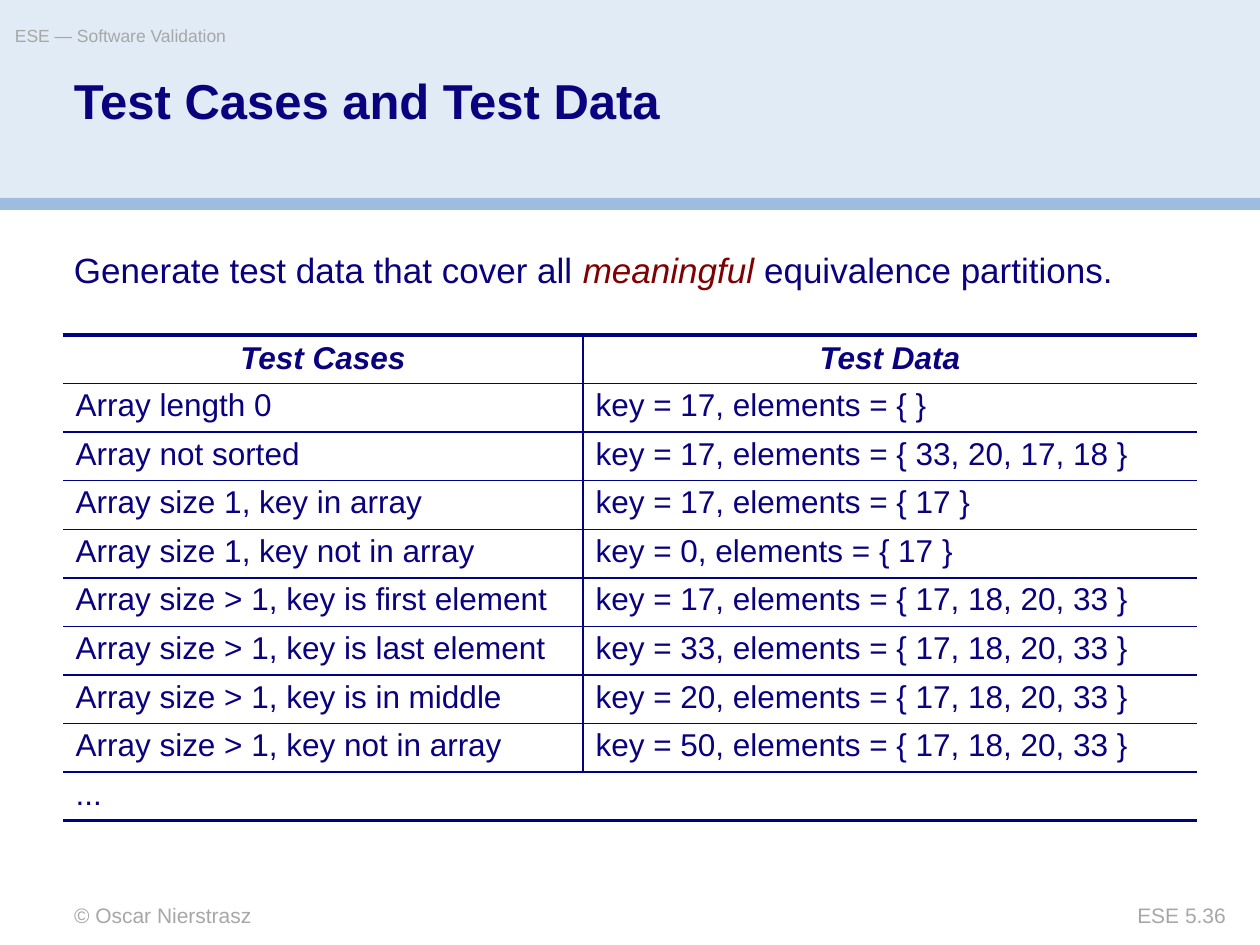
from lxml import etree
from pptx import Presentation
from pptx.dml.color import RGBColor
from pptx.enum.shapes import MSO_SHAPE
from pptx.enum.text import MSO_ANCHOR, PP_ALIGN
from pptx.oxml.ns import qn
from pptx.util import Pt

PX = 914400 // 126
COLORS = {"band": "E1EBF5", "rule": "9CBDDE", "grey": "A7A7A7",
          "navy": "0A017F", "red": "7F0101", "line": "00027F"}
HEADERS = ("Test Cases", "Test Data")
CASES = [
    ("Array length 0", "key = 17, elements = { }"),
    ("Array not sorted", "key = 17, elements = { 33, 20, 17, 18 }"),
    ("Array size 1, key in array", "key = 17, elements = { 17 }"),
    ("Array size 1, key not in array", "key = 0, elements = { 17 }"),
    ("Array size > 1, key is first element", "key = 17, elements = { 17, 18, 20, 33 }"),
    ("Array size > 1, key is last element", "key = 33, elements = { 17, 18, 20, 33 }"),
    ("Array size > 1, key is in middle", "key = 20, elements = { 17, 18, 20, 33 }"),
    ("Array size > 1, key not in array", "key = 50, elements = { 17, 18, 20, 33 }"),
]


def emu(*lengths):
    """Turn px lengths into EMU."""
    return [n * PX for n in lengths]


def style_run(r, size, color, bold=False, italic=False):
    """Set the font of one run."""
    r.font.name, r.font.size = "Arial", Pt(size)
    r.font.bold, r.font.italic = bold, italic
    r.font.color.rgb = RGBColor.from_string(COLORS[color])


def add_bar(s, box, color):
    """Draw a plain filled rectangle."""
    sp = s.shapes.add_shape(MSO_SHAPE.RECTANGLE, *emu(*box))
    sp.shadow.inherit = False
    sp.fill.solid()
    sp.fill.fore_color.rgb = RGBColor.from_string(COLORS[color])
    sp.line.fill.background()


def add_text(s, box, text, size, color, bold=False, align=PP_ALIGN.LEFT, spacing=1.0):
    """Place a one-paragraph text box without insets and return the paragraph."""
    tf = s.shapes.add_textbox(*emu(*box)).text_frame
    tf.word_wrap = True
    tf.margin_left = tf.margin_top = tf.margin_right = tf.margin_bottom = 0
    tf.text = text
    p = tf.paragraphs[0]
    p.alignment, p.line_spacing = align, spacing
    style_run(p.runs[0], size, color, bold)
    return p


def add_header(s, box):
    """Draw the title band with its rule, course label and title."""
    x, y, w, h = box
    add_bar(s, (x, y, w, h - 11), "band")
    add_bar(s, (x, y + h - 12, w, 12), "rule")
    add_text(s, (x + 15, y + 25, 743, 35), "ESE — Software Validation", 10, "grey")
    add_text(s, (x + 74, y + 77, 1113, 112), "Test Cases and Test Data", 28, "navy",
             bold=True, spacing=0.9)


def add_lead(s, box):
    """Write the lead sentence with its stressed word."""
    p = add_text(s, box, "Generate test data that cover all ", 20, "navy", spacing=0.95)
    for text, color, italic in (("meaningful", "red", True),
                                (" equivalence partitions.", "navy", False)):
        r = p.add_run()
        r.text = text
        style_run(r, 20, color, italic=italic)


def set_borders(cell, widths):
    """Give a cell its left, right, top and bottom lines in points, 0 for none."""
    tcPr = cell._tc.get_or_add_tcPr()
    for i, (side, width) in enumerate(zip("LRTB", widths)):
        ln = etree.Element(qn(f"a:ln{side}"), w=str(Pt(width)))
        if width:
            fill = etree.SubElement(ln, qn("a:solidFill"))
            etree.SubElement(fill, qn("a:srgbClr"), val=COLORS["line"])
        else:
            etree.SubElement(ln, qn("a:noFill"))
        tcPr.insert(i, ln)


def add_case_table(s, box, split):
    """Build the table of test cases and data, closed by a merged row."""
    rows = [HEADERS, *CASES, ("...", "")]
    last = len(rows) - 1
    table = s.shapes.add_table(len(rows), 2, *emu(*box)).table
    table.first_row = table.horz_banding = False
    table.columns[0].width, table.columns[1].width = emu(split, box[2] - split)
    for i, row in enumerate(rows):
        table.rows[i].height = box[3] * PX // len(rows)
        for j, text in enumerate(row):
            cell = table.cell(i, j)
            cell.fill.background()
            inner = 1 if i < last else 0
            set_borders(cell, (inner * j, inner * (1 - j),
                               1 if i else 2.25, 1 if i < last else 2.25))
            if not text:
                continue
            cell.text = text
            p = cell.text_frame.paragraphs[0]
            p.line_spacing = 0.95
            if i == 0:
                p.alignment = PP_ALIGN.CENTER
                cell.vertical_anchor = MSO_ANCHOR.MIDDLE
            style_run(p.runs[0], 18, "navy", bold=i == 0, italic=i == 0)
    table.cell(last, 0).merge(table.cell(last, 1))


def add_footer(s, box):
    """Write the author and the page number at both ends of the footer."""
    x, y, w, h = box
    add_text(s, (x, y, 525, h), "© Oscar Nierstrasz", 12, "grey")
    add_text(s, (x + w - 186, y, 186, h), "ESE 5.36", 12, "grey", align=PP_ALIGN.RIGHT)


def main():
    """Build the slide and save it."""
    prs = Presentation()
    prs.slide_width, prs.slide_height = emu(1260, 945)
    s = prs.slides.add_slide(prs.slide_layouts[6])
    add_header(s, (0, 0, 1260, 210))
    add_lead(s, (74, 252, 1111, 86))
    add_case_table(s, (63, 335, 1134, 462), 520)
    add_footer(s, (74, 903, 1152, 25))
    prs.save("out.pptx")


if __name__ == "__main__":
    main()
